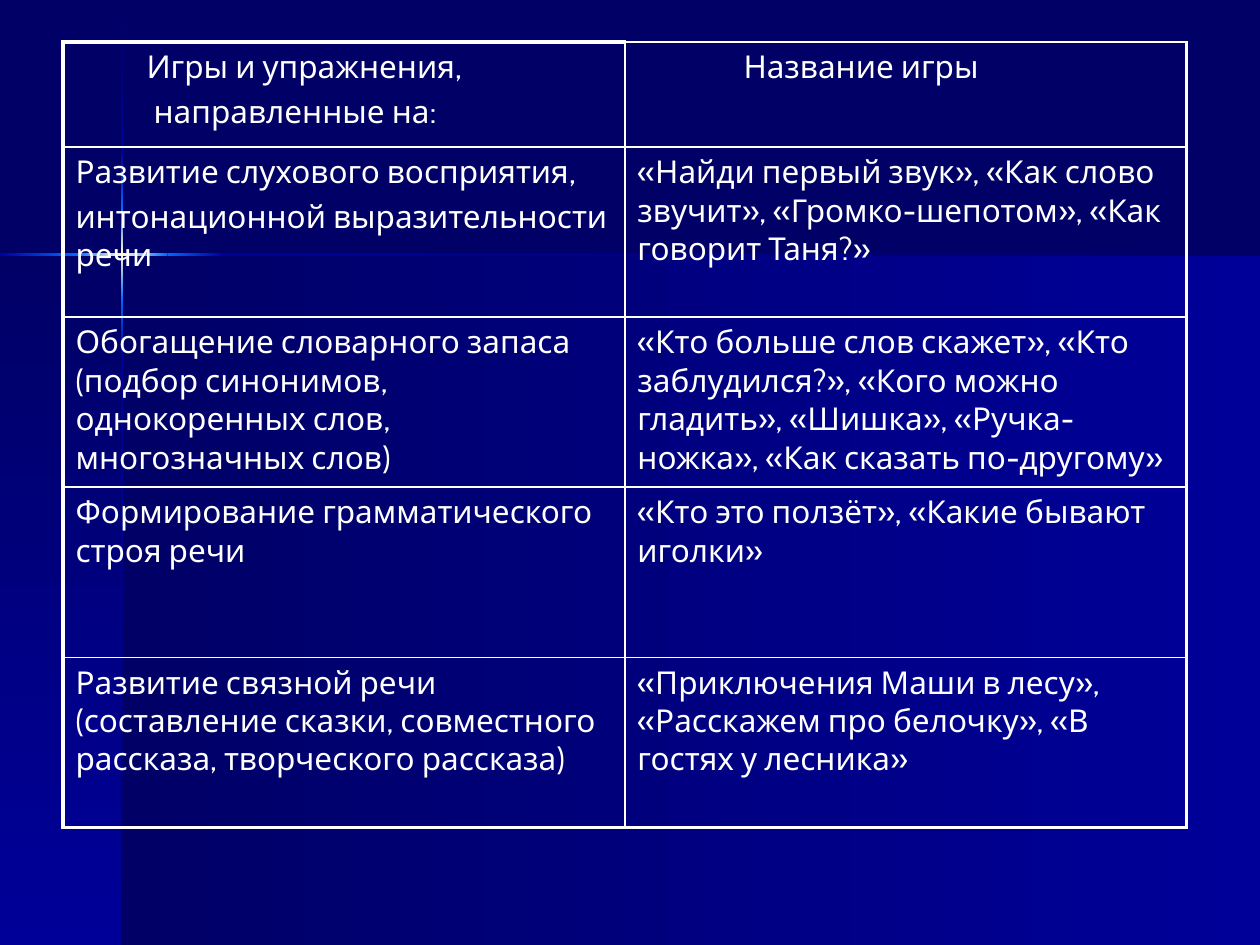
import copy
import itertools

import pptx
import pptx.dml.color
import pptx.enum.shapes
import pptx.oxml.ns
import pptx.util
from lxml import etree

Pt = pptx.util.Pt
RGBColor = pptx.dml.color.RGBColor

NAVY = RGBColor(0x00, 0x00, 0x66)
BLUE = RGBColor(0x00, 0x00, 0x99)
BRIGHT = RGBColor(0x00, 0x66, 0xFF)
CREAM = RGBColor(0xFF, 0xFF, 0xCC)
WHITE = RGBColor(0xFF, 0xFF, 0xFF)

FONT = "Cabin"
RIGHTWARD, DOWNWARD = 0, 270
THIN, THICK = 1, 2.25
BEAM_WIDTH = 1.4
BEAM_COLORS = [
    (NAVY, BLUE), (BLUE, BRIGHT), (BRIGHT, CREAM, BRIGHT), (BRIGHT, BLUE), (BLUE, NAVY),
]
VERTICAL_STOPS = [0.7, 87.1, 118.8, 171.4, 203, 540]
HORIZONTAL_STOPS = [0, 43.5, 95.8, 127.4, 720]

COLUMN_WIDTH = 321.1
ROW_HEIGHTS = [60] + [97.2] * 4
HEADER_INDENTS = [[40.6, 44.6], [60.6]]
ROWS = [
    (["Игры и упражнения,", "направленные на:"], ["Название игры"]),
    (["Развитие слухового восприятия,", "интонационной выразительности речи"],
     ["«Найди первый звук», «Как слово звучит», «Громко-шепотом», «Как говорит Таня?»"]),
    (["Обогащение словарного запаса (подбор синонимов, однокоренных слов, многозначных слов)"],
     ["«Кто больше слов скажет», «Кто заблудился?», «Кого можно гладить», «Шишка», "
      "«Ручка-ножка», «Как сказать по-другому»"]),
    (["Формирование грамматического строя речи"],
     ["«Кто это ползёт», «Какие бывают иголки»"]),
    (["Развитие связной речи (составление сказки, совместного рассказа, творческого рассказа)"],
     ["«Приключения Маши в лесу», «Расскажем про белочку», «В гостях у лесника»"]),
]


def add_gradient(slide, left, top, width, height, colors, angle):
    """Add a borderless rectangle whose colours are spread evenly along the angle."""
    shape = slide.shapes.add_shape(
        pptx.enum.shapes.MSO_SHAPE.RECTANGLE, Pt(left), Pt(top), Pt(width), Pt(height))
    shape.shadow.inherit = False
    shape.line.fill.background()
    shape.fill.gradient()
    shape.fill.gradient_angle = angle
    if len(colors) == 3:
        stops = shape.element.find(".//" + pptx.oxml.ns.qn("a:gsLst"))
        stops.insert(1, copy.deepcopy(stops[0]))
    for index, (stop, color) in enumerate(zip(shape.fill.gradient_stops, colors)):
        stop.color.rgb = color
        stop.position = index / (len(colors) - 1)


def add_backdrop(slide):
    """Add the two panels and the crossing beams of light."""
    add_gradient(slide, 69.8, 145.4, 650.2, 394.6, (NAVY, BLUE), RIGHTWARD)
    add_gradient(slide, 0, 145.4, 69.8, 394.6, (NAVY, BLUE), DOWNWARD)
    for (start, end), colors in zip(itertools.pairwise(VERTICAL_STOPS), BEAM_COLORS):
        add_gradient(slide, 69.1, start, BEAM_WIDTH, end - start, colors, DOWNWARD)
    for (start, end), colors in zip(itertools.pairwise(HORIZONTAL_STOPS), BEAM_COLORS[1:]):
        add_gradient(slide, start, 144.7, end - start, BEAM_WIDTH, colors, RIGHTWARD)


def set_borders(cell, widths):
    """Draw white left, right, top and bottom borders of the given widths."""
    properties = cell._tc.get_or_add_tcPr()
    for index, (side, width) in enumerate(zip("LRTB", widths)):
        line = etree.Element(pptx.oxml.ns.qn(f"a:ln{side}"), w=str(Pt(width)))
        fill = etree.SubElement(line, pptx.oxml.ns.qn("a:solidFill"))
        etree.SubElement(fill, pptx.oxml.ns.qn("a:srgbClr"), val=str(WHITE))
        properties.insert(index, line)


def write_cell(cell, lines, indents):
    """Write one paragraph per line, each with its own left indent."""
    for index, (text, indent) in enumerate(zip(lines, indents)):
        frame = cell.text_frame
        paragraph = frame.add_paragraph() if index else frame.paragraphs[0]
        paragraph.space_before = Pt(3.6)
        if indent:
            paragraph._p.get_or_add_pPr().set("marL", str(Pt(indent)))
        run = paragraph.add_run()
        run.text = text
        run.font.name = FONT
        run.font.size = Pt(18)
        run.font.color.rgb = WHITE


def add_games_table(slide):
    """Add the table of exercise aims and game names."""
    table = slide.shapes.add_table(
        len(ROWS), 2, Pt(36), Pt(24), Pt(2 * COLUMN_WIDTH), Pt(sum(ROW_HEIGHTS))).table
    table.first_row = False
    table.horz_banding = False
    for column in table.columns:
        column.width = Pt(COLUMN_WIDTH)
    for row_index, (row, height) in enumerate(zip(ROWS, ROW_HEIGHTS)):
        table.rows[row_index].height = Pt(height)
        for column_index, lines in enumerate(row):
            cell = table.cell(row_index, column_index)
            cell.fill.background()
            is_first = column_index == 0
            set_borders(cell, (
                THICK if is_first else THIN,
                THIN if is_first else THICK,
                THICK if is_first and row_index == 0 else THIN,
                THICK if row_index == len(ROWS) - 1 else THIN,
            ))
            indents = [0] * len(lines) if row_index else HEADER_INDENTS[column_index]
            write_cell(cell, lines, indents)


def main():
    """Build and save the slide."""
    presentation = pptx.Presentation()
    presentation.slide_width = Pt(720)
    presentation.slide_height = Pt(540)
    slide = presentation.slides.add_slide(presentation.slide_layouts[6])
    slide.background.fill.solid()
    slide.background.fill.fore_color.rgb = NAVY
    add_backdrop(slide)
    add_games_table(slide)
    presentation.save("out.pptx")


if __name__ == "__main__":
    main()
